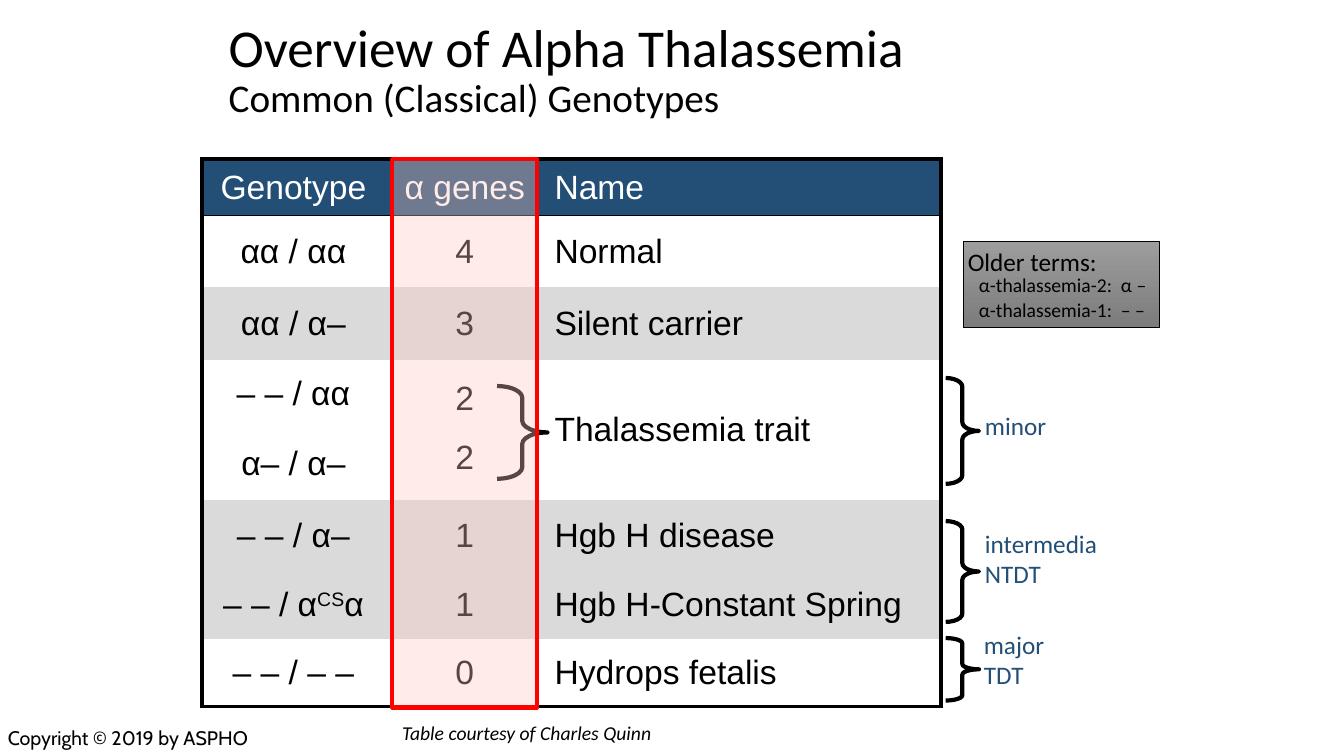
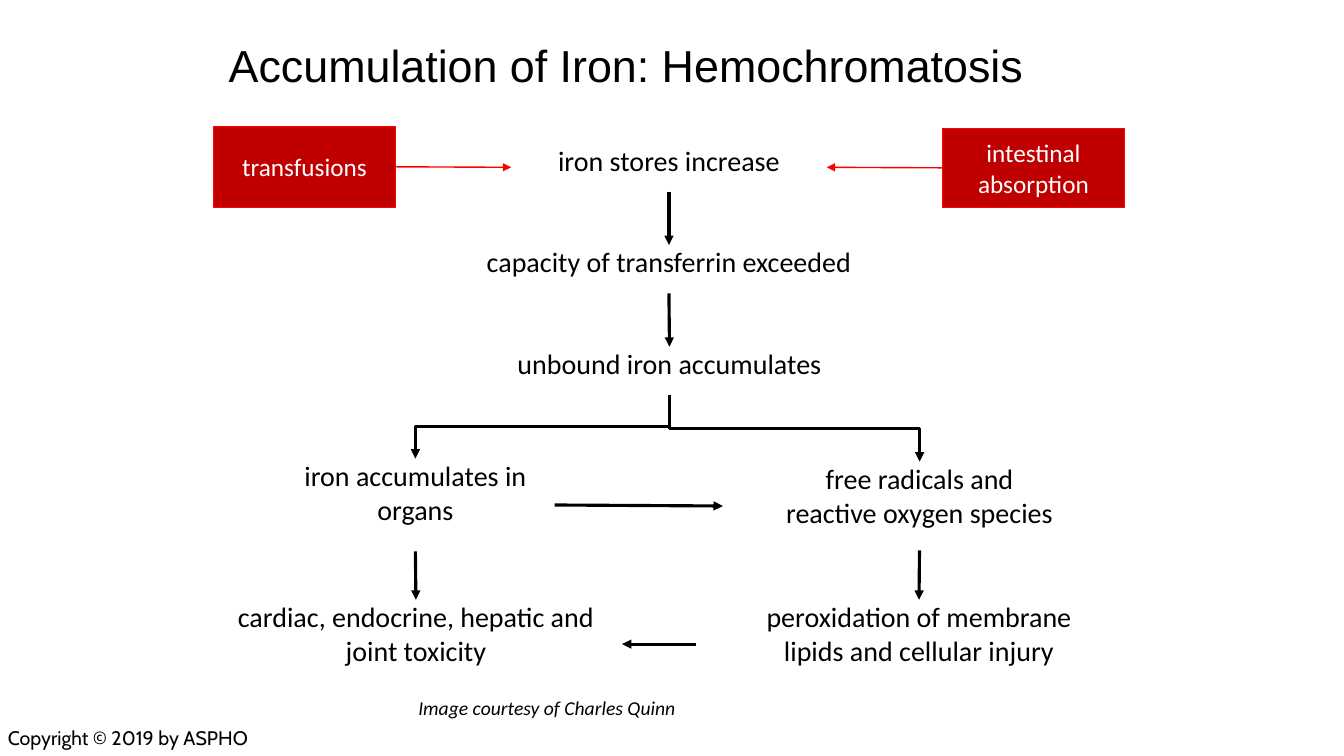
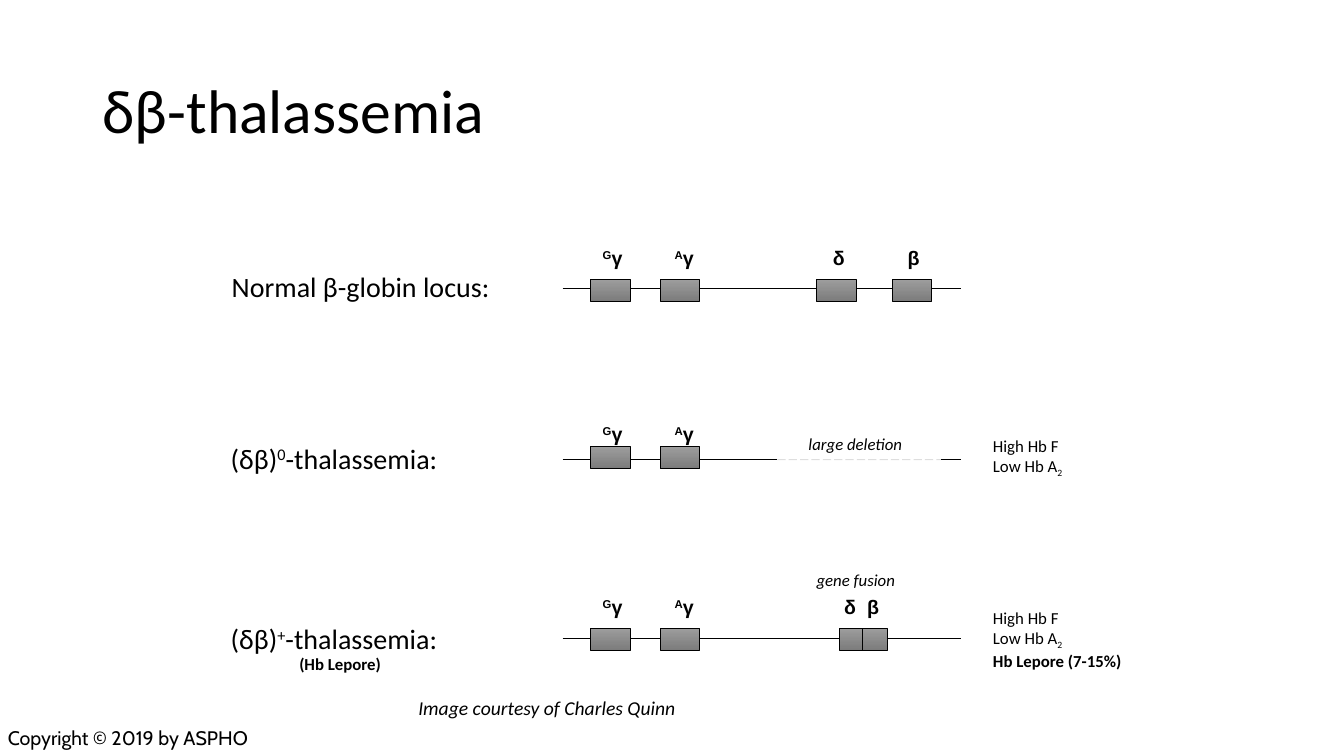
"""Build three slides on thalassemia genotypes, iron overload and globin loci."""
from dataclasses import dataclass, replace
from typing import Sequence

from lxml import etree
from pptx import Presentation
from pptx.dml.color import RGBColor
from pptx.enum.dml import MSO_LINE
from pptx.enum.shapes import MSO_CONNECTOR, MSO_SHAPE
from pptx.enum.text import MSO_ANCHOR, MSO_AUTO_SIZE, PP_ALIGN
from pptx.oxml.ns import qn
from pptx.util import Inches, Pt

LEFT, CENTER = PP_ALIGN.LEFT, PP_ALIGN.CENTER
TOP, MIDDLE = MSO_ANCHOR.TOP, MSO_ANCHOR.MIDDLE
RECTANGLE, BRACE = MSO_SHAPE.RECTANGLE, MSO_SHAPE.RIGHT_BRACE
STRAIGHT, ELBOW = MSO_CONNECTOR.STRAIGHT, MSO_CONNECTOR.ELBOW
FIT_TEXT, LONG_DASH = MSO_AUTO_SIZE.SHAPE_TO_FIT_TEXT, MSO_LINE.LONG_DASH
SIDE_TOP, SIDE_LEFT, SIDE_BOTTOM, SIDE_RIGHT = range(4)

BLACK, WHITE, NAVY, RED = "000000", "FFFFFF", "234F77", "FF0000"
DARK_RED, PINK, BAND, GRAY = "C00000", "FFC9BE", "DADADA", "808080"
GRADIENT = ("9D9D9D", "7C7C7C")
SUPERSCRIPT, SUBSCRIPT = 30, -25


@dataclass(frozen=True)
class Style:
    """Character and paragraph look of a text."""
    size: float
    font: str = "Calibri"
    color: str = BLACK
    bold: bool = False
    italic: bool = False
    align: int = LEFT
    shift: int = SUPERSCRIPT


@dataclass(frozen=True)
class Box:
    """Position and size in inches."""
    left: float
    top: float
    width: float
    height: float


@dataclass(frozen=True)
class Severity:
    """Brace beside the table and the clinical terms it points to."""
    brace: Box
    curve: float
    label: Box
    terms: tuple[str, ...]


@dataclass(frozen=True)
class Gene:
    """Gene symbol and the box that marks it on the locus."""
    symbol: str
    label_left: float
    label_width: float
    box_left: float
    box_width: float = 0.39


@dataclass(frozen=True)
class Locus:
    """One globin locus with its name, genes and line segments."""
    name: str
    name_box: Box
    axis: float
    label_top: float
    box_top: float
    genes: tuple[Gene, ...]
    segments: tuple[tuple[float, float], ...] = ((5.58, 9.53),)


TERM = Style(18, color=NAVY)
CREDIT = Style(14, italic=True)
SMALL = Style(12, shift=SUBSCRIPT)
REMARK = Style(12, italic=True)
STEP = Style(20, align=CENTER)
SOURCE = Style(18, color=WHITE, align=CENTER)
CELL = Style(24, "Arial")
SYMBOL = Style(14, "Arial", bold=True, align=CENTER)

COLUMN_WIDTHS = (1.82, 1.58, 3.93)
ROW_HEIGHTS = (0.56, 0.71, 0.72, 0.67, 0.72, 0.71, 0.67, 0.67)
GENOTYPES = (
    ("Genotype", "α genes", "Name"),
    ("αα / αα", "4", "Normal"),
    ("αα / α–", "3", "Silent carrier"),
    ("– – / αα", "2\n2", "Thalassemia trait"),
    ("α– / α–", "", ""),
    ("– – / α–", "1", "Hgb H disease"),
    ("– – / α|CS|α", "1", "Hgb H-Constant Spring"),
    ("– – / – –", "0", "Hydrops fetalis"),
)
TRAIT_ROW = 3
BANDED_ROWS = (2, 5, 6)

SEVERITIES = (
    Severity(Box(9.38, 3.75, 0.33, 1.05), 0.26, Box(9.67, 4.02, 0.82, 0.4), ("minor",)),
    Severity(Box(9.38, 5.17, 0.33, 1), 0.25, Box(9.67, 5.19, 1.33, 0.71), ("intermedia", "NTDT")),
    Severity(Box(9.38, 6.33, 0.33, 0.62), 0.16, Box(9.66, 6.19, 0.81, 0.71), ("major", "TDT")),
)

STEPS = {
    "stores": (Box(5.07, 1.42, 3.13, 0.48), ("iron stores increase",)),
    "capacity": (Box(3.5, 2.43, 6.27, 0.48), ("capacity of transferrin exceeded",)),
    "unbound": (Box(3.92, 3.44, 5.44, 0.48), ("unbound iron accumulates",)),
    "organs": (Box(2.74, 4.55, 2.76, 0.92), ("iron accumulates in organs",)),
    "radicals": (Box(7.17, 4.58, 3.9, 0.88), ("free radicals and", "reactive oxygen species")),
    "toxicity": (Box(2.08, 5.95, 4.09, 0.88), ("cardiac, endocrine, hepatic and joint toxicity",)),
    "injury": (Box(6.9, 5.95, 4.43, 0.88), ("peroxidation of membrane", "lipids and cellular injury")),
}
SOURCES = {
    "transfusions": Box(2.12, 1.25, 1.8, 0.81),
    "intestinal absorption": Box(9.35, 1.27, 1.8, 0.79),
}
ARROWS = (
    ("stores", SIDE_BOTTOM, "capacity", SIDE_TOP),
    ("capacity", SIDE_BOTTOM, "unbound", SIDE_TOP),
    ("organs", SIDE_BOTTOM, "toxicity", SIDE_TOP),
    ("radicals", SIDE_BOTTOM, "injury", SIDE_TOP),
    ("injury", SIDE_LEFT, "toxicity", SIDE_RIGHT),
    ("organs", SIDE_RIGHT, "radicals", SIDE_LEFT),
    ("transfusions", SIDE_RIGHT, "stores", SIDE_LEFT),
    ("intestinal absorption", SIDE_LEFT, "stores", SIDE_RIGHT),
)

GAMMAS = (Gene("|G|γ", 5.87, 0.41, 5.86), Gene("|A|γ", 6.58, 0.41, 6.55))
LOCI = (
    Locus("Normal β-globin locus:", Box(2.2, 2.62, 2.78, 0.44), 2.86, 2.39, 2.77,
          GAMMAS + (Gene("δ", 8.16, 0.32, 8.1), Gene("β", 8.9, 0.32, 8.85))),
    Locus("(δβ)|0|-thalassemia:", Box(2.19, 4.33, 2.29, 0.44), 4.56, 4.14, 4.43,
          GAMMAS, ((5.58, 7.71), (9.33, 9.53))),
    Locus("(δβ)|+|-thalassemia:", Box(2.19, 6.12, 2.29, 0.44), 6.33, 5.85, 6.23,
          GAMMAS + (Gene("δ", 8.27, 0.32, 8.32), Gene("β", 8.5, 0.32, 8.55, 0.25))),
)


def rgb(color: str) -> RGBColor:
    """Turn a hex string into a colour."""
    return RGBColor.from_string(color)


def lengths(box: Box) -> tuple:
    """Give the sides of a box as lengths."""
    return tuple(Inches(side) for side in (box.left, box.top, box.width, box.height))


def write(text_frame, lines: Sequence[str], style: Style) -> None:
    """Write paragraphs; every second piece between bars is raised or lowered."""
    text_frame.text = "\n".join(line.split("|")[0] for line in lines)
    for paragraph, line in zip(text_frame.paragraphs, lines):
        paragraph.alignment = style.align
        for index, piece in enumerate(line.split("|")[1:]):
            run = paragraph.add_run()
            run.text = piece
            if index % 2 == 0:
                run._r.get_or_add_rPr().set("baseline", str(style.shift * 1000))
        for run in paragraph.runs:
            run.font.name, run.font.size = style.font, Pt(style.size)
            run.font.bold, run.font.italic = style.bold, style.italic
            run.font.color.rgb = rgb(style.color)


def add_text(slide, box: Box, lines: Sequence[str], style: Style, wrap: bool = False):
    """Add a text box that fits its text unless it wraps."""
    shape = slide.shapes.add_textbox(*lengths(box))
    shape.text_frame.word_wrap = wrap
    if not wrap:
        shape.text_frame.auto_size = FIT_TEXT
    write(shape.text_frame, lines, style)
    return shape


def add_title(slide, box: Box, style: Style, title: str, subtitle: str = "") -> None:
    """Add the slide title with an optional smaller second line."""
    shape = add_text(slide, box, [title], style, wrap=True)
    shape.text_frame.vertical_anchor = MIDDLE
    paragraph = shape.text_frame.paragraphs[0]
    paragraph.line_spacing = 0.9
    if subtitle:
        paragraph.add_line_break()
        run = paragraph.add_run()
        run.text = subtitle
        run.font.name, run.font.size = style.font, Pt(28)
        run.font.color.rgb = rgb(style.color)


def add_footer(slide, credit: str, box: Box) -> None:
    """Add the copyright line and the credit."""
    add_text(slide, Box(-0.02, 7.15, 3.4, 0.34), ["Copyright © 2019 by ASPHO"], Style(14, "Cabin"), wrap=True)
    add_text(slide, box, [credit], CREDIT, wrap=True)


def add_shape(slide, kind: int, box: Box, line: str, width: float, fill: str = ""):
    """Add a preset shape with an outline and an optional fill."""
    shape = slide.shapes.add_shape(kind, *lengths(box))
    shape.shadow.inherit = False
    shape.line.color.rgb, shape.line.width = rgb(line), Pt(width)
    if fill:
        shape.fill.solid()
        shape.fill.fore_color.rgb = rgb(fill)
    else:
        shape.fill.background()
    return shape


def add_gray_box(slide, box: Box) -> None:
    """Add a box shaded from light gray down to dark gray."""
    shape = add_shape(slide, RECTANGLE, box, BLACK, 0.5)
    shape.fill.gradient()
    shape.fill.gradient_angle = 270
    for stop, color in zip(shape.fill.gradient_stops, GRADIENT):
        stop.color.rgb = rgb(color)


def add_brace(slide, box: Box, curve: float) -> None:
    """Add a right brace."""
    shape = add_shape(slide, BRACE, box, BLACK, 3)
    shape.adjustments[0] = curve


def set_opacity(shape, percent: int) -> None:
    """Make the first colour of a shape see-through."""
    color = shape._element.spPr.find(".//" + qn("a:srgbClr"))
    etree.SubElement(color, qn("a:alpha")).set("val", str(percent * 1000))


def add_line(slide, start: tuple, end: tuple, color: str, width: float, kind: int = STRAIGHT, arrow: bool = False):
    """Add a connector without shadow, with an optional arrowhead."""
    connector = slide.shapes.add_connector(kind, *(Inches(value) for value in start + end))
    connector.line.color.rgb, connector.line.width = rgb(color), Pt(width)
    etree.SubElement(connector._element.spPr, qn("a:effectLst"))
    if arrow:
        etree.SubElement(connector.line._get_or_add_ln(), qn("a:tailEnd")).set("type", "triangle")
    return connector


def add_branch(slide, start: tuple, end: tuple) -> None:
    """Add a bent arrow that leaves and arrives vertically."""
    middle_x, middle_y = (start[0] + end[0]) / 2, (start[1] + end[1]) / 2
    half_width, half_height = abs(end[0] - start[0]) / 2, (end[1] - start[1]) / 2
    side = 1 if end[0] > start[0] else -1
    connector = add_line(
        slide,
        (middle_x + side * half_height, middle_y - half_width),
        (middle_x - side * half_height, middle_y + half_width),
        BLACK, 2.25, ELBOW, arrow=True)
    connector._element.spPr.find(qn("a:xfrm")).set("rot", str((180 + side * 90) * 60000))


def set_borders(cell, widths: dict[str, float]) -> None:
    """Set the border widths of a cell in points, zero for none."""
    properties = cell._tc.get_or_add_tcPr()
    for side, width in widths.items():
        border = etree.SubElement(properties, qn(f"a:ln{side}"), w=str(Pt(width)))
        if width:
            fill = etree.SubElement(border, qn("a:solidFill"))
            etree.SubElement(fill, qn("a:srgbClr")).set("val", BLACK)
        else:
            etree.SubElement(border, qn("a:noFill"))


def add_genotype_table(slide) -> None:
    """Add the table of genotypes."""
    last_row, last_column = len(ROW_HEIGHTS) - 1, len(COLUMN_WIDTHS) - 1
    table = slide.shapes.add_table(
        last_row + 1, last_column + 1, *lengths(Box(2, 1.58, sum(COLUMN_WIDTHS), sum(ROW_HEIGHTS)))).table
    table.first_row = table.horz_banding = False
    for column, width in zip(table.columns, COLUMN_WIDTHS):
        column.width = Inches(width)
    for row, height in zip(table.rows, ROW_HEIGHTS):
        row.height = Inches(height)
    for row_index, texts in enumerate(GENOTYPES):
        for column_index, text in enumerate(texts):
            cell = table.cell(row_index, column_index)
            style = replace(
                CELL, color=BLACK if row_index else WHITE, align=LEFT if column_index == last_column else CENTER)
            write(cell.text_frame, text.split("\n"), style)
            cell.vertical_anchor = MIDDLE
            set_borders(cell, {
                "L": 0 if column_index else 3,
                "R": 3 if column_index == last_column else 0,
                "T": {0: 3, 1: 1}.get(row_index, 0),
                "B": {0: 1, last_row: 3}.get(row_index, 0),
            })
            if row_index == 0 or row_index in BANDED_ROWS:
                cell.fill.solid()
                cell.fill.fore_color.rgb = rgb(BAND if row_index else NAVY)
            else:
                cell.fill.background()
    for column_index in (1, 2):
        table.cell(TRAIT_ROW, column_index).merge(table.cell(TRAIT_ROW + 1, column_index))
    count_cell = table.cell(TRAIT_ROW, 1)
    count_cell.vertical_anchor = TOP
    for paragraph in count_cell.text_frame.paragraphs:
        paragraph.line_spacing = 1.4
    count_cell.text_frame.paragraphs[1].space_before = Pt(4.8)


def add_older_terms(slide) -> None:
    """Add the gray box that explains older terms."""
    add_gray_box(slide, Box(9.55, 2.39, 1.95, 0.86))
    for top, line in ((2.66, "α-thalassemia-2:\tα –"), (2.91, "α-thalassemia-1:\t– –")):
        shape = add_text(slide, Box(9.61, top, 1.97, 0.34), [line], Style(14), wrap=True)
        properties = shape.text_frame.paragraphs[0]._p.get_or_add_pPr()
        tabs = etree.SubElement(properties, qn("a:tabLst"))
        etree.SubElement(tabs, qn("a:tab"), pos=str(Inches(1.41)), algn="l")
    add_text(slide, Box(9.5, 2.39, 1.49, 0.4), ["Older terms:"], Style(18))


def build_genotypes(slide) -> None:
    """Build the slide on alpha thalassemia genotypes."""
    add_title(slide, Box(2.17, 0.08, 9, 1.25), Style(38),
              "Overview of Alpha Thalassemia", "Common (Classical) Genotypes")
    add_genotype_table(slide)
    add_brace(slide, Box(4.93, 3.83, 0.5, 0.92), 0.23)
    for severity in SEVERITIES:
        add_brace(slide, severity.brace, severity.curve)
        add_text(slide, severity.label, severity.terms, TERM)
    highlight = add_shape(slide, RECTANGLE, Box(3.89, 1.58, 1.44, 5.44), RED, 3, PINK)
    set_opacity(highlight, 35)
    add_older_terms(slide)
    add_footer(slide, "Table courtesy of Charles Quinn", Box(3.89, 7.1, 3.08, 0.34))


def build_iron(slide) -> None:
    """Build the flow chart of iron accumulation."""
    add_title(slide, Box(2.17, 0.17, 9, 1), Style(32, "Arial"), "Accumulation of Iron: Hemochromatosis")
    nodes = {}
    for name, (box, lines) in STEPS.items():
        nodes[name] = add_text(slide, box, lines, STEP, wrap=True)
        frame = nodes[name].text_frame
        frame.margin_left = frame.margin_top = frame.margin_right = frame.margin_bottom = 0
    for name, box in SOURCES.items():
        nodes[name] = add_shape(slide, RECTANGLE, box, RED, 0.5, DARK_RED)
        nodes[name].text_frame.word_wrap = True
        nodes[name].text_frame.vertical_anchor = MIDDLE
        write(nodes[name].text_frame, [name], SOURCE)
    for origin, origin_side, target, target_side in ARROWS:
        color, width = (RED, 1) if origin in SOURCES else (BLACK, 2.25)
        connector = add_line(slide, (0, 0), (1, 1), color, width, arrow=True)
        connector.begin_connect(nodes[origin], origin_side)
        connector.end_connect(nodes[target], target_side)
    for end in ((9.12, 4.58), (4.12, 4.55)):
        add_branch(slide, (6.64, 3.92), end)
    add_footer(slide, "Image courtesy of Charles Quinn", Box(4.05, 6.86, 3.08, 0.34))


def add_locus(slide, locus: Locus) -> None:
    """Add a locus: its name, its line and its genes."""
    add_text(slide, locus.name_box, [locus.name], Style(20))
    for start, end in locus.segments:
        add_line(slide, (start, locus.axis), (end, locus.axis), BLACK, 0.5)
    for gene in locus.genes:
        add_text(slide, Box(gene.label_left, locus.label_top, gene.label_width, 0.34), [gene.symbol], SYMBOL)
        add_gray_box(slide, Box(gene.box_left, locus.box_top, gene.box_width, 0.22))


def build_loci(slide) -> None:
    """Build the slide that compares globin loci."""
    add_title(slide, Box(0.92, 0.4, 11.5, 1.45), Style(44), "δβ-thalassemia")
    for locus in LOCI:
        add_locus(slide, locus)
    deletion = add_line(slide, (7.71, 4.56), (9.33, 4.56), GRAY, 0.75)
    deletion.line.dash_style = LONG_DASH
    set_opacity(deletion, 25)
    add_text(slide, Box(7.92, 4.25, 1.14, 0.3), ["large deletion"], REMARK)
    add_text(slide, Box(8, 5.6, 0.99, 0.3), ["gene fusion"], REMARK)
    findings = ["High Hb F", "Low Hb A|2"]
    add_text(slide, Box(9.75, 4.27, 0.91, 0.5), findings, SMALL)
    lepore = add_text(slide, Box(9.75, 5.98, 1.49, 0.71), findings + ["Hb Lepore (7-15%)"], SMALL)
    lepore.text_frame.paragraphs[-1].runs[0].font.bold = True
    add_text(slide, Box(2.87, 6.44, 1.02, 0.3), ["(Hb Lepore)"], replace(SMALL, bold=True))
    add_footer(slide, "Image courtesy of Charles Quinn", Box(4.05, 6.86, 3.08, 0.34))


def main() -> None:
    """Build and save the presentation."""
    presentation = Presentation()
    presentation.slide_width, presentation.slide_height = Inches(13.33), Inches(7.5)
    blank_layout = presentation.slide_layouts[6]
    for build in (build_genotypes, build_iron, build_loci):
        build(presentation.slides.add_slide(blank_layout))
    presentation.save("out.pptx")


if __name__ == "__main__":
    main()
